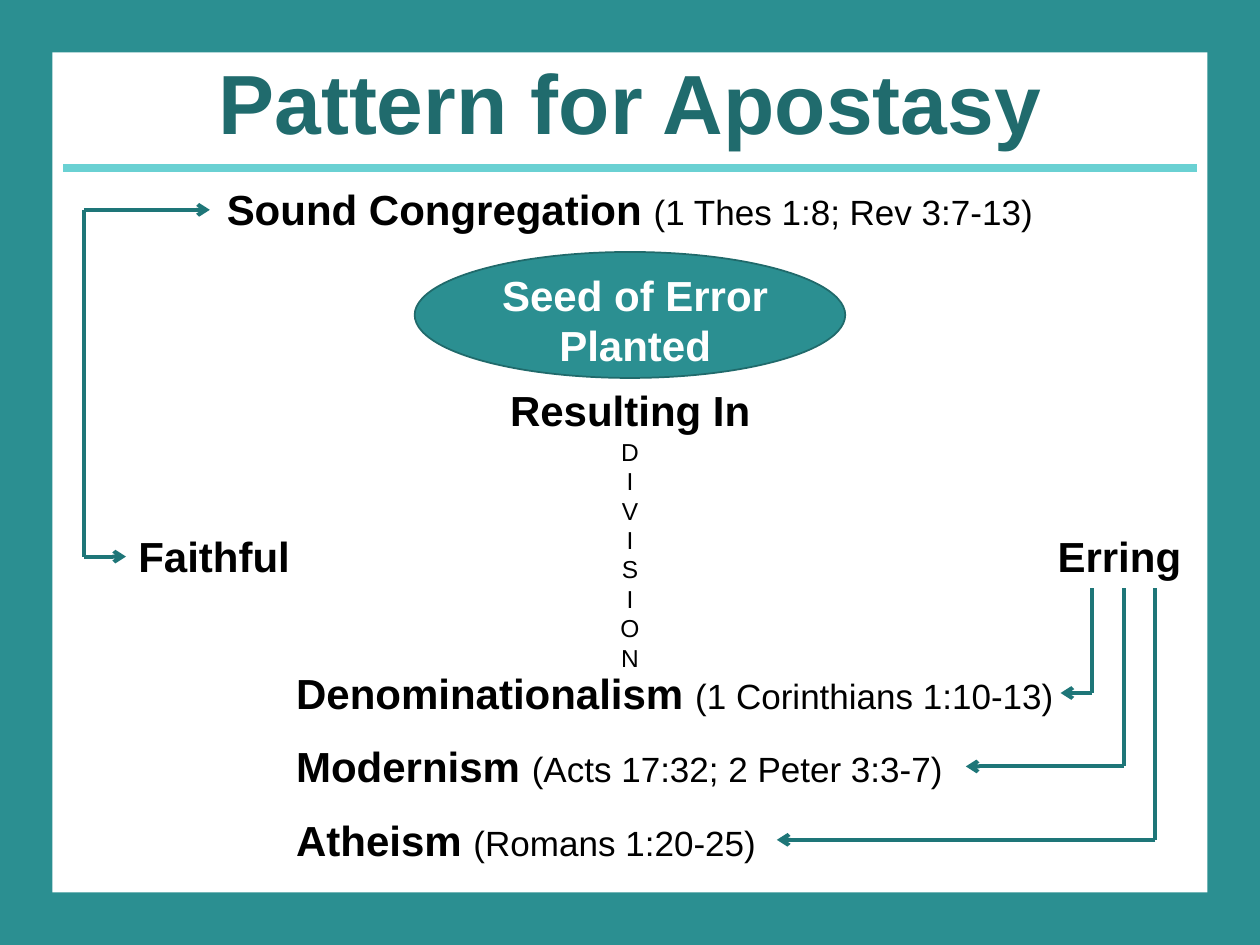
from dataclasses import dataclass

from lxml import etree
from pptx import Presentation
from pptx.dml.color import RGBColor
from pptx.enum.shapes import MSO_CONNECTOR, MSO_SHAPE
from pptx.enum.text import MSO_ANCHOR, PP_ALIGN
from pptx.oxml.ns import qn
from pptx.util import Cm, Pt

STRAIGHT = MSO_CONNECTOR.STRAIGHT
RECT, OVAL = MSO_SHAPE.RECTANGLE, MSO_SHAPE.OVAL
LEFT, CENTER = PP_ALIGN.LEFT, PP_ALIGN.CENTER
TOP, BOTTOM = MSO_ANCHOR.TOP, MSO_ANCHOR.BOTTOM

FONT = "Arial"
COLORS = {
    "frame": "2B8F91",
    "title": "206B6D",
    "rule": "6AD1D3",
    "arrow": "1E7678",
    "outline": "206A6B",
    "text": "000000",
    "white": "FFFFFF",
}
WIDTH, HEIGHT, BORDER = 25.4, 19.05, 1.06


@dataclass
class Label:
    """A bold heading with an optional scripture reference, placed in cm."""
    text: str
    left: float
    top: float
    width: float
    height: float = 1.27
    reference: str = ""
    align: PP_ALIGN = CENTER
    color: str = "text"
    size: int = 24
    bold: bool = True


@dataclass
class Error:
    """One branch of error and the x position where its arrow ends."""
    name: str
    reference: str
    arrow_end: float


def rgb(name: str) -> RGBColor:
    return RGBColor.from_string(COLORS[name])


def format_run(r, size: int, color: str, bold: bool) -> None:
    r.font.name = FONT
    r.font.size = Pt(size)
    r.font.bold = bold
    r.font.color.rgb = rgb(color)


def add_filled(s, kind, left: float, top: float, width: float, height: float):
    sp = s.shapes.add_shape(kind, Cm(left), Cm(top), Cm(width), Cm(height))
    sp.shadow.inherit = False
    sp.fill.solid()
    sp.fill.fore_color.rgb = rgb("frame")
    sp.line.fill.background()
    return sp


def add_label(s, label: Label):
    sp = s.shapes.add_textbox(Cm(label.left), Cm(label.top),
                              Cm(label.width), Cm(label.height))
    tf = sp.text_frame
    tf.word_wrap = True
    tf.vertical_anchor = TOP
    tf.text = label.text
    for p in tf.paragraphs:
        p.alignment = label.align
        for r in p.runs:
            format_run(r, label.size, label.color, label.bold)
    if label.reference:
        r = tf.paragraphs[0].add_run()
        r.text = label.reference
        format_run(r, 20, label.color, False)
    return sp


def add_line(s, x1: float, y1: float, x2: float, y2: float,
             color: str = "arrow", width: float = 2.25, arrow: bool = False) -> None:
    line = s.shapes.add_connector(STRAIGHT, Cm(x1), Cm(y1), Cm(x2), Cm(y2))
    line.line.color.rgb = rgb(color)
    line.line.width = Pt(width)
    props = line._element.spPr
    if arrow:
        etree.SubElement(props.find(qn("a:ln")), qn("a:tailEnd"), type="arrow")
    etree.SubElement(props, qn("a:effectLst"))


def add_tab_stop(p, position: float) -> None:
    tabs = etree.SubElement(p._p.get_or_add_pPr(), qn("a:tabLst"))
    etree.SubElement(tabs, qn("a:tab"), pos=str(Cm(position)), algn="l")


def add_frame(s) -> None:
    for left in (0, WIDTH - BORDER):
        add_filled(s, RECT, left, 0, BORDER, HEIGHT)
    for top in (0, HEIGHT - BORDER):
        add_filled(s, RECT, 0, top, WIDTH, BORDER)


def add_title(s, text: str) -> None:
    sp = s.shapes.title
    sp.left, sp.top = Cm(BORDER), Cm(BORDER)
    sp.width, sp.height = Cm(WIDTH - 2 * BORDER), Cm(2.24)
    tf = sp.text_frame
    tf.text = text
    tf.vertical_anchor = BOTTOM
    tf.margin_bottom = Cm(0.25)
    p = tf.paragraphs[0]
    p.alignment = CENTER
    format_run(p.runs[0], 48, "title", True)


def main() -> None:
    prs = Presentation()
    prs.slide_width, prs.slide_height = Cm(WIDTH), Cm(HEIGHT)
    s = prs.slides.add_slide(prs.slide_layouts[5])

    # Frame, title and rule
    add_frame(s)
    add_title(s, "Pattern for Apostasy")
    add_line(s, 1.27, 3.38, 24.13, 3.38, "rule", 4.5)

    # Sound congregation, and the two sides of the division
    add_label(s, Label("Sound Congregation ", 1.27, 3.58, 22.86,
                       reference="(1 Thes 1:8; Rev 3:7-13)"))
    sides = add_label(s, Label("Faithful\tErring", 2.54, 10.57, 21.59, align=LEFT))
    add_tab_stop(sides.text_frame.paragraphs[0], 18.53)

    # Bracket from the faithful to the sound congregation
    add_line(s, 1.69, 4.23, 4.23, 4.23, arrow=True)
    add_line(s, 1.69, 4.23, 1.69, 11.22)
    add_line(s, 1.69, 11.22, 2.54, 11.22, arrow=True)

    # Seed of error and its result
    seed = add_filled(s, OVAL, 8.36, 5.08, 8.68, 2.54)
    seed.line.color.rgb = rgb("outline")
    seed.line.width = Pt(1)
    add_label(s, Label("Seed of Error\vPlanted", 9.31, 5.3, 6.99, 2.31, color="white"))
    add_label(s, Label("Resulting In", 8.47, 7.62, 8.47))
    add_label(s, Label("\n".join("DIVISION"), 11.64, 8.68, 2.12, 5.05,
                       size=14, bold=False))

    # Branches of error, each with an elbow arrow from "Erring"
    errors = [
        Error("Denominationalism", "(1 Corinthians 1:10-13)", 21.38),
        Error("Modernism", "(Acts 17:32; 2 Peter 3:3-7)", 19.47),
        Error("Atheism", "(Romans 1:20-25)", 15.66),
    ]
    for i, error in enumerate(errors):
        drop = 1.48 * i
        x, y = 22.01 + 0.64 * i, 13.97 + drop
        add_label(s, Label(error.name + " ", 5.72, 13.33 + drop, 16.3,
                           reference=error.reference, align=LEFT))
        add_line(s, x, 11.86, x, y)
        add_line(s, x, y, error.arrow_end, y, arrow=True)

    prs.save("out.pptx")


if __name__ == "__main__":
    main()
